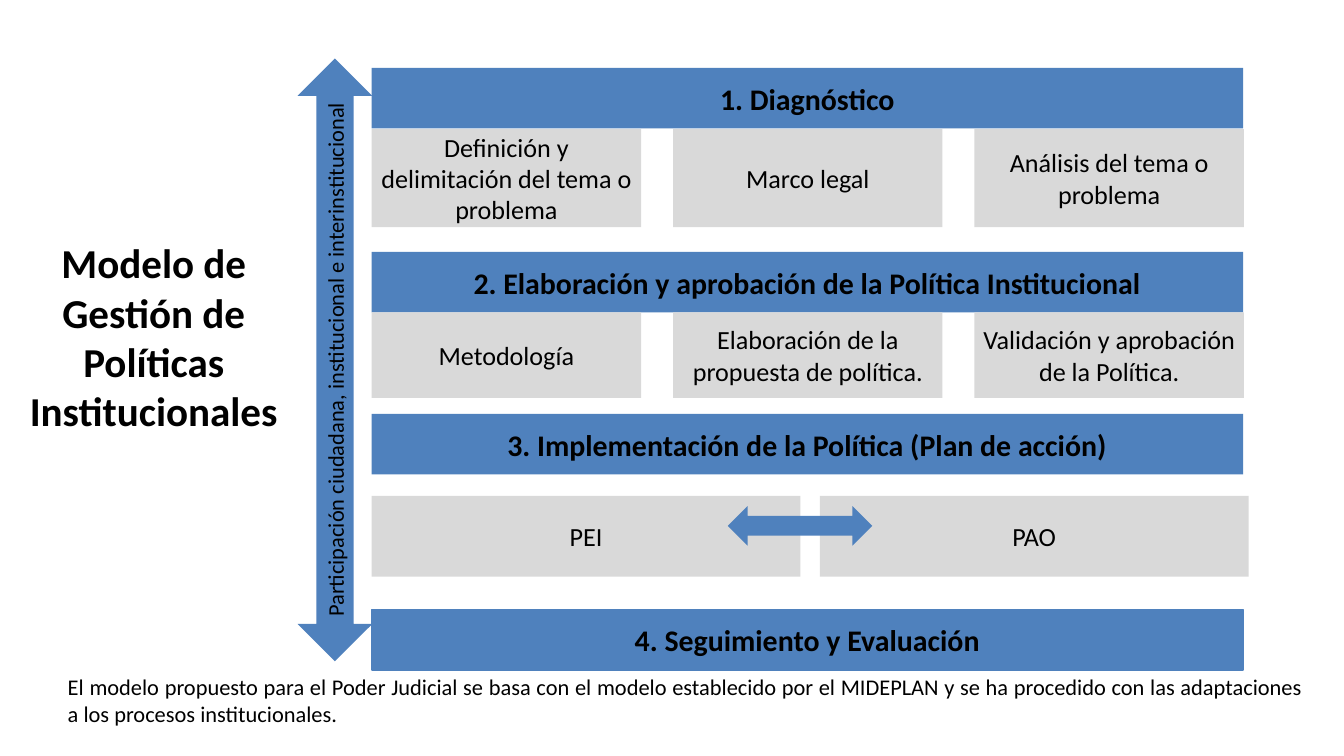
"""Build the slide on the management model for institutional policies."""
from pptx import Presentation
from pptx.dml.color import RGBColor
from pptx.enum.shapes import MSO_SHAPE
from pptx.enum.text import MSO_ANCHOR, MSO_AUTO_SIZE, PP_ALIGN
from pptx.util import Inches, Pt

BLUE = RGBColor(0x4F, 0x81, 0xBD)
GRAY = RGBColor(0xD9, 0xD9, 0xD9)
BLACK = RGBColor(0, 0, 0)
FONT = "Calibri"

TITLE = "Modelo de Gestión de Políticas Institucionales"
PARTICIPATION = "Participación ciudadana, institucional e interinstitucional"
NOTE = (
    "El modelo propuesto para el Poder Judicial se basa con el modelo establecido "
    "por el MIDEPLAN y se ha procedido con las adaptaciones a los procesos institucionales."
)
STAGES = [
    {"name": "1. Diagnóstico", "top": 1.01, "steps_top": 1.92, "steps_height": 1.46,
     "step_width": 4.01, "pitch": 4.485,
     "steps": ["Definición y delimitación del tema o problema", "Marco legal",
               "Análisis del tema o problema"]},
    {"name": "2. Elaboración y aprobación de la Política Institucional",
     "top": 3.75, "steps_top": 4.65, "steps_height": 1.27,
     "step_width": 4.01, "pitch": 4.485,
     "steps": ["Metodología", "Elaboración de la propuesta de política.",
               "Validación y aprobación de la Política."]},
    {"name": "3. Implementación de la Política (Plan de acción)",
     "top": 6.16, "steps_top": 7.38, "steps_height": 1.2,
     "step_width": 6.38, "pitch": 6.67, "steps": ["PEI", "PAO"]},
    {"name": "4. Seguimiento y Evaluación", "top": 9.07, "steps": []},
]
LEFT, STAGE_WIDTH, STAGE_HEIGHT = 5.53, 12.97, 0.9


def write(shape, text, size, bold=False, align=PP_ALIGN.CENTER, anchor=MSO_ANCHOR.MIDDLE):
    frame = shape.text_frame
    frame.word_wrap = True
    frame.auto_size = MSO_AUTO_SIZE.NONE
    frame.vertical_anchor = anchor
    para = frame.paragraphs[0]
    para.text = text
    para.alignment = align
    para.font.name = FONT
    para.font.size = Pt(size)
    para.font.bold = bold
    para.font.color.rgb = BLACK


def add_filled(shapes, kind, area, color):
    shape = shapes.add_shape(kind, *map(Inches, area))
    shape.shadow.inherit = False
    shape.fill.solid()
    shape.fill.fore_color.rgb = color
    shape.line.fill.background()
    return shape


def add_stage(shapes, stage):
    area = (LEFT, stage["top"], STAGE_WIDTH, STAGE_HEIGHT)
    header = add_filled(shapes, MSO_SHAPE.RECTANGLE, area, BLUE)
    write(header, stage["name"], 32, bold=True)
    for index, step in enumerate(stage["steps"]):
        area = (LEFT + index * stage["pitch"], stage["steps_top"],
                stage["step_width"], stage["steps_height"])
        box = add_filled(shapes, MSO_SHAPE.RECTANGLE, area, GRAY)
        write(box, step, 28)
    return header


def main():
    deck = Presentation()
    deck.slide_width, deck.slide_height = Inches(20), Inches(11.25)
    page = deck.slides.add_slide(deck.slide_layouts[5])

    title = page.shapes.title
    title.left, title.top = Inches(-0.17), Inches(4.38)
    title.width, title.height = Inches(4.92), Inches(1.25)
    write(title, TITLE, 44, bold=True)

    model = page.shapes.add_group_shape()
    headers = [add_stage(model.shapes, stage) for stage in STAGES]
    headers[-1].line.color.rgb = BLUE
    headers[-1].line.width = Pt(2)

    add_filled(page.shapes, MSO_SHAPE.LEFT_RIGHT_ARROW, (10.83, 7.53, 2.15, 0.59), BLUE)
    participation = add_filled(
        page.shapes, MSO_SHAPE.LEFT_RIGHT_ARROW, (0.5, 4.8, 8.97, 1.11), BLUE)
    participation.rotation = 270
    write(participation, PARTICIPATION, 24)

    note = page.shapes.add_textbox(Inches(0.91), Inches(9.97), Inches(18.57), Inches(0.91))
    write(note, NOTE, 24, align=PP_ALIGN.JUSTIFY, anchor=MSO_ANCHOR.TOP)
    note.text_frame.auto_size = MSO_AUTO_SIZE.SHAPE_TO_FIT_TEXT

    deck.save("out.pptx")


if __name__ == "__main__":
    main()
